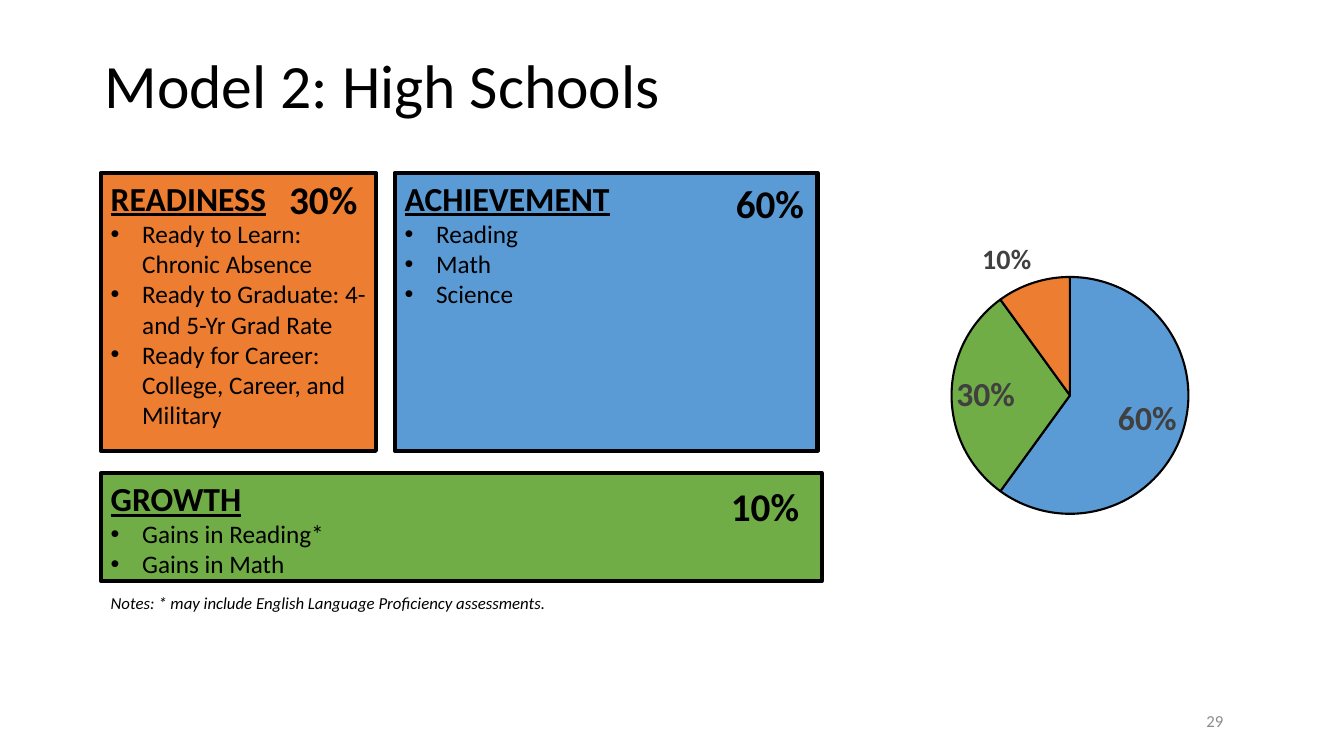
import lxml.etree
import pptx
import pptx.chart.data
import pptx.dml.color
import pptx.enum.chart
import pptx.enum.shapes
import pptx.enum.text
import pptx.oxml.ns
import pptx.util

Pt = pptx.util.Pt
ALIGN = pptx.enum.text.PP_ALIGN
ANCHOR = pptx.enum.text.MSO_ANCHOR
FONT = "Calibri"
BLACK, GREY, DARK_GREY = "000000", "8C8C8C", "404040"
ORANGE, BLUE, GREEN = "ED7D31", "5B9BD5", "70AD47"


def rgb(value):
    """Turn a hex string into a colour."""
    return pptx.dml.color.RGBColor.from_string(value)


def style_font(font, size, color=BLACK, bold=False, italic=False, underline=False):
    """Set the typeface, size, colour and emphasis of a font."""
    font.name, font.size = FONT, Pt(size)
    font.color.rgb = rgb(color)
    font.bold, font.italic, font.underline = bold, italic, underline


def style_outline(line, width):
    """Give a line a black stroke of the given width."""
    line.color.rgb = rgb(BLACK)
    line.width = Pt(width)


def add_label(slide, box, text, size, color=BLACK, bold=False, italic=False,
              align=ALIGN.LEFT, anchor=ANCHOR.TOP, spacing=1.0):
    """Add one line of text in a box."""
    frame = slide.shapes.add_textbox(*map(Pt, box)).text_frame
    frame.word_wrap = True
    frame.vertical_anchor = anchor
    paragraph = frame.paragraphs[0]
    paragraph.text = text
    paragraph.alignment, paragraph.line_spacing = align, spacing
    style_font(paragraph.runs[0].font, size, color, bold, italic)


def add_bullet(paragraph):
    """Give a paragraph a hanging bullet."""
    properties = paragraph._p.get_or_add_pPr()
    indent = Pt(22.5)
    properties.set("marL", str(indent))
    properties.set("indent", str(-indent))
    for tag, name, value in (("a:buFont", "typeface", "Arial"), ("a:buChar", "char", "•")):
        lxml.etree.SubElement(properties, pptx.oxml.ns.qn(tag)).set(name, value)


def add_component(slide, box, fill, heading, measures):
    """Add a coloured panel with a heading and bulleted measures."""
    panel = slide.shapes.add_shape(pptx.enum.shapes.MSO_SHAPE.RECTANGLE, *map(Pt, box))
    panel.shadow.inherit = False
    panel.fill.solid()
    panel.fill.fore_color.rgb = rgb(fill)
    style_outline(panel.line, 3)
    frame = panel.text_frame
    frame.word_wrap = True
    frame.vertical_anchor = ANCHOR.TOP
    frame.text = "\n".join([heading, *measures])
    for index, paragraph in enumerate(frame.paragraphs):
        is_heading = index == 0
        paragraph.alignment = ALIGN.LEFT
        style_font(paragraph.runs[0].font, 24 if is_heading else 18,
                   bold=is_heading, underline=is_heading)
        if not is_heading:
            add_bullet(paragraph)


def fix_plot_area(chart, x, y, w, h):
    """Place the inner plot area by fractions of the chart frame."""
    plot_area = chart._chartSpace.chart.plotArea
    qn = pptx.oxml.ns.qn
    for existing in plot_area.findall(qn("c:layout")):
        plot_area.remove(existing)
    layout = lxml.etree.Element(qn("c:layout"))
    manual = lxml.etree.SubElement(layout, qn("c:manualLayout"))
    settings = {"layoutTarget": "inner", "xMode": "edge", "yMode": "edge",
                "x": x, "y": y, "w": w, "h": h}
    for tag, value in settings.items():
        lxml.etree.SubElement(manual, qn(f"c:{tag}")).set("val", str(value))
    plot_area.insert(0, layout)


def add_weight_pie(slide, box, slices):
    """Add a pie of weights from (weight, colour, label size) slices."""
    weights = pptx.chart.data.CategoryChartData(number_format="0%")
    weights.categories = [str(number + 1) for number in range(len(slices))]
    weights.add_series("Series 1", [weight for weight, _, _ in slices])
    chart = slide.shapes.add_chart(pptx.enum.chart.XL_CHART_TYPE.PIE,
                                   *map(Pt, box), weights).chart
    chart.has_legend = chart.has_title = False
    style_font(chart.font, 10)
    plot = chart.plots[0]
    plot.vary_by_categories = True
    for index, (_, color, label_size) in enumerate(slices):
        point = plot.series[0].points[index]
        point.format.fill.solid()
        point.format.fill.fore_color.rgb = rgb(color)
        style_outline(point.format.line, 1.5)
        style_font(point.data_label.font, label_size, DARK_GREY, bold=True)
        point.data_label.position = pptx.enum.chart.XL_LABEL_POSITION.BEST_FIT
    fix_plot_area(chart, 0.27, 0.17, 0.47, 0.79)


def main():
    """Build the slide and save it."""
    deck = pptx.Presentation()
    deck.slide_width, deck.slide_height = Pt(960), Pt(540)
    slide = deck.slides.add_slide(deck.slide_layouts[6])

    add_label(slide, (67.5, 11, 871, 104.5), "Model 2: High Schools", 44,
              anchor=ANCHOR.MIDDLE, spacing=0.9)
    add_label(slide, (665, 500.5, 216, 29), "29", 12, GREY,
              align=ALIGN.RIGHT, anchor=ANCHOR.MIDDLE)

    add_component(slide, (72, 123.5, 196.5, 198.5), ORANGE, "READINESS",
                  ["Ready to Learn: Chronic Absence",
                   "Ready to Graduate: 4- and 5-Yr Grad Rate",
                   "Ready for Career: College, Career, and Military"])
    add_component(slide, (282, 123.5, 302, 198.5), BLUE, "ACHIEVEMENT",
                  ["Reading", "Math", "Science"])
    add_component(slide, (72, 338, 515, 77), GREEN, "GROWTH",
                  ["Gains in Reading*", "Gains in Math"])

    for left, top, weight in ((199.5, 121.5, "30%"), (518.5, 124.5, "60%"),
                              (515, 341, "10%")):
        add_label(slide, (left, top, 67, 41), weight, 28, bold=True)
    add_label(slide, (72, 420, 418, 22),
              "Notes: * may include English Language Proficiency assessments.",
              12, italic=True)

    add_weight_pie(slide, (582.5, 161, 360, 215),
                   [(0.6, BLUE, 24), (0.3, GREEN, 24), (0.1, ORANGE, 20)])
    deck.save("out.pptx")


if __name__ == "__main__":
    main()
